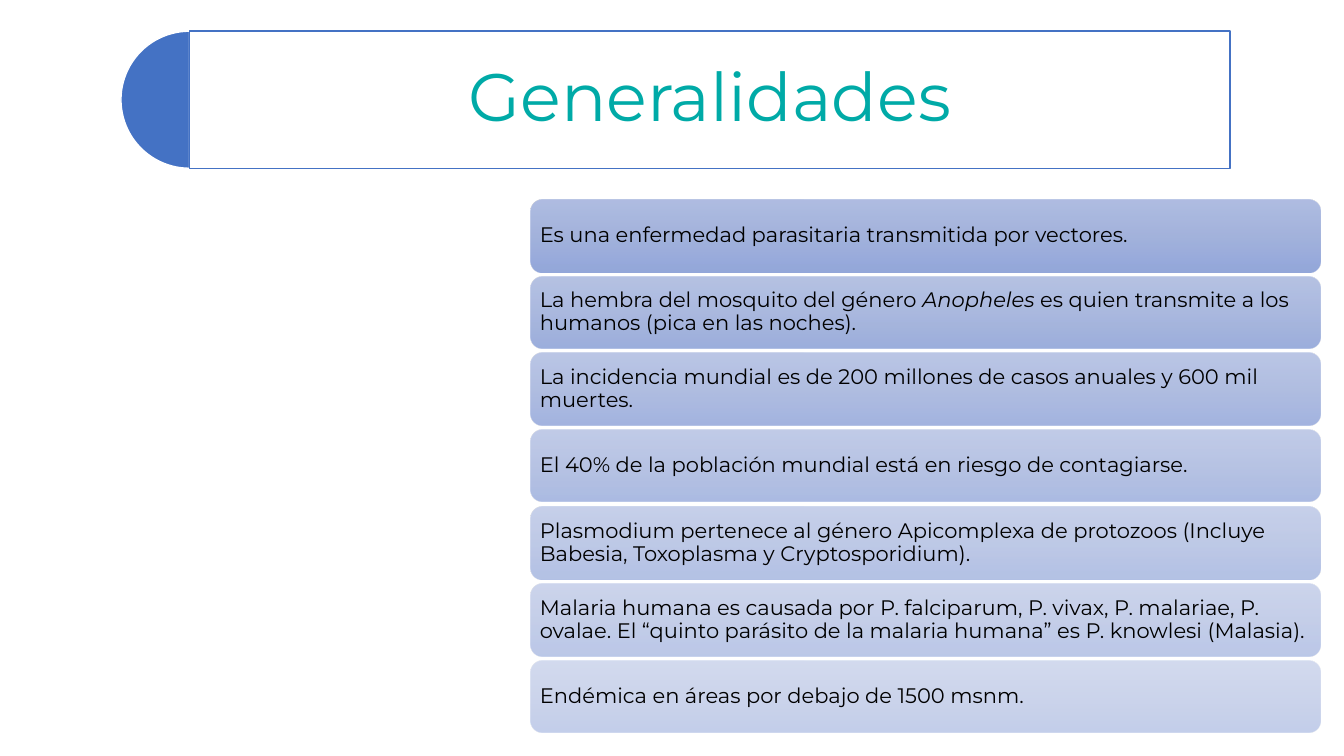
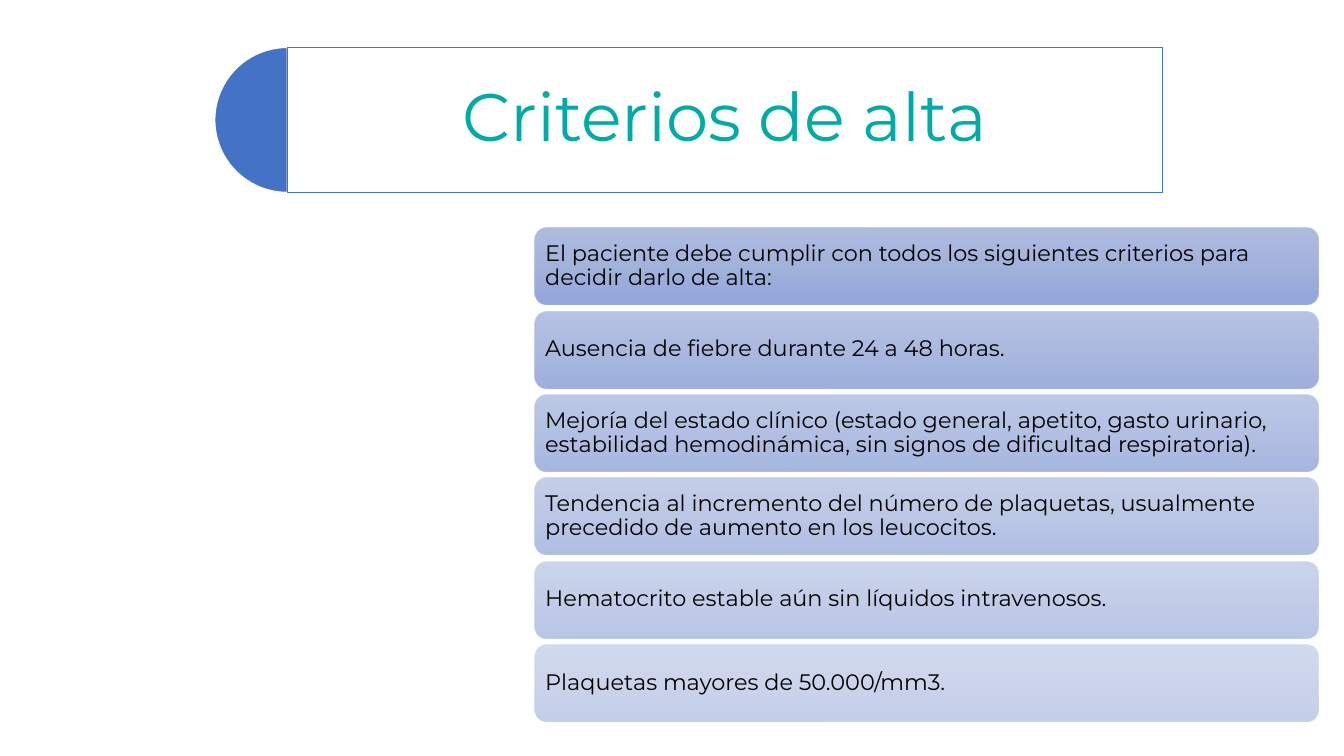
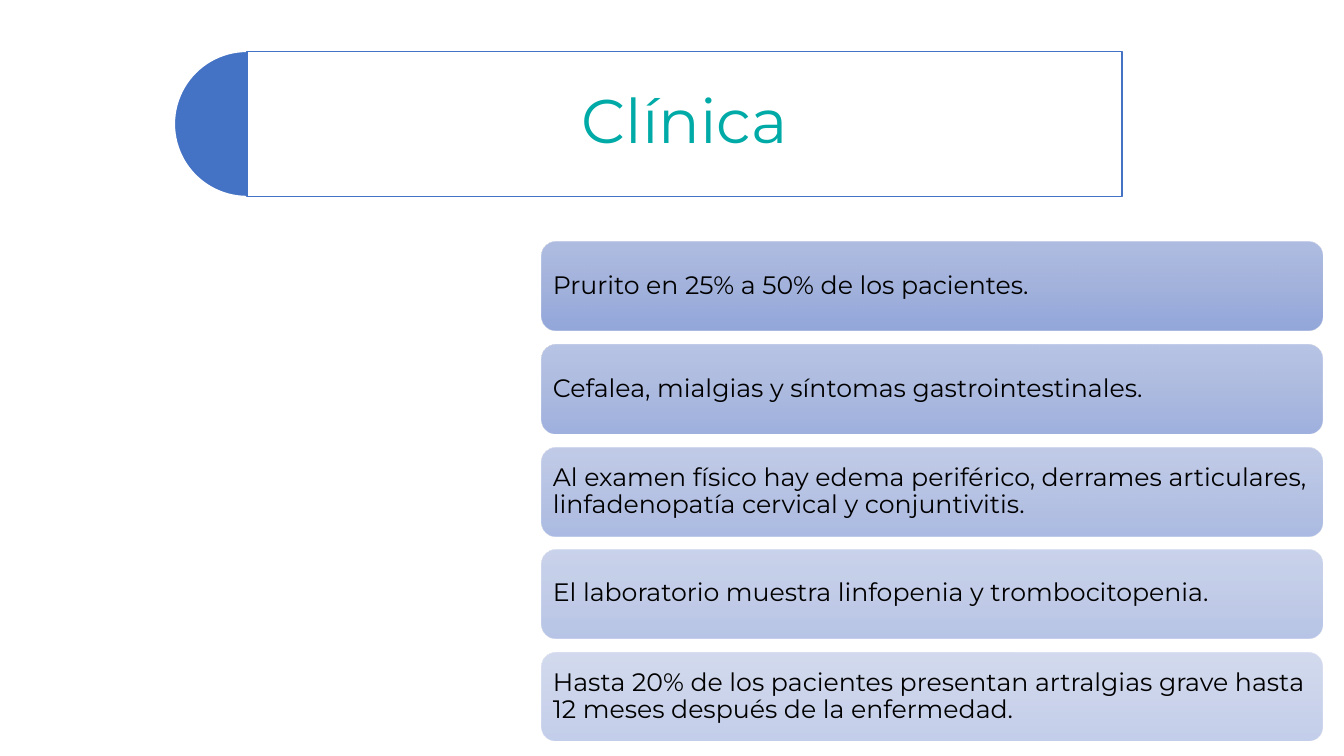
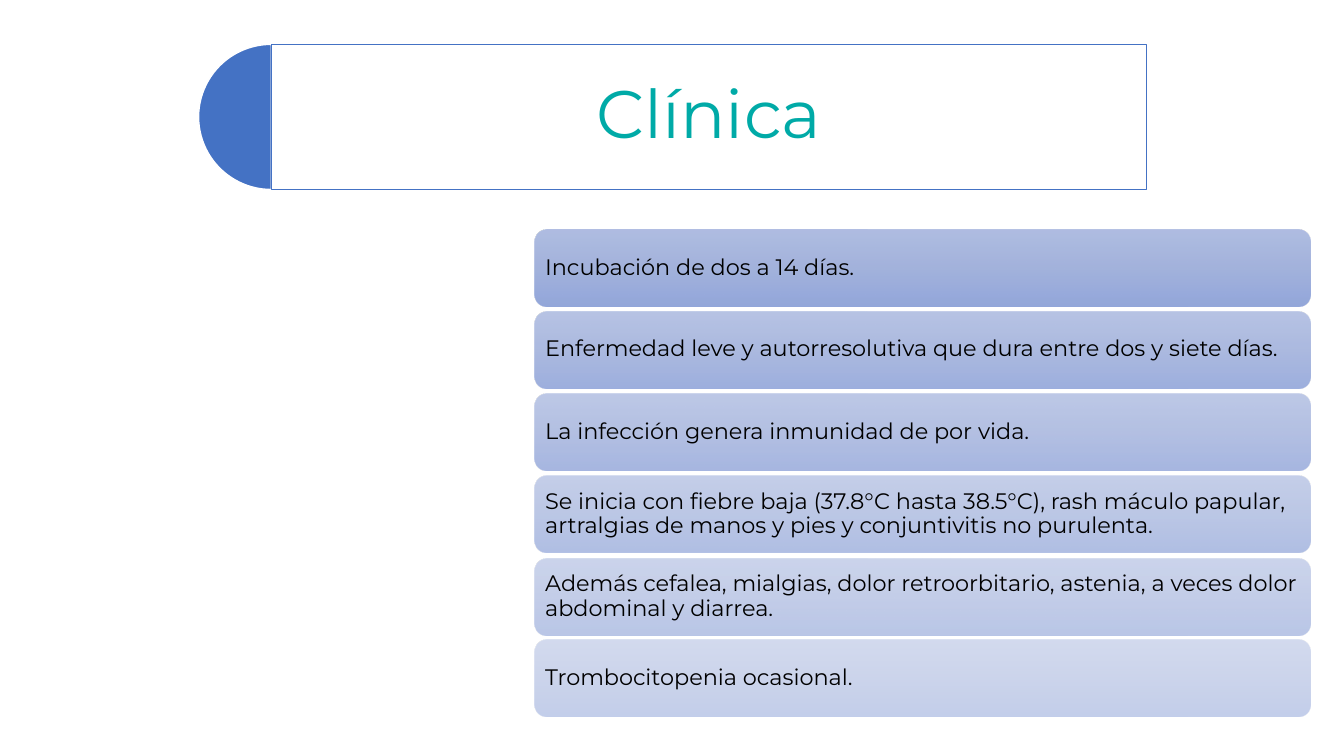
from pptx import Presentation
from pptx.dml.color import RGBColor
from pptx.enum.shapes import MSO_SHAPE
from pptx.enum.text import MSO_ANCHOR, PP_ALIGN
from pptx.oxml.ns import qn
from pptx.oxml.xmlchemy import OxmlElement
from pptx.util import Emu, Pt

PIE, RECT, ROUND = MSO_SHAPE.PIE, MSO_SHAPE.RECTANGLE, MSO_SHAPE.ROUNDED_RECTANGLE
LEFT, CENTER = PP_ALIGN.LEFT, PP_ALIGN.CENTER
MIDDLE = MSO_ANCHOR.MIDDLE

# Shared look
FONT = "Montserrat"
BLUE, TEAL, WHITE, BLACK = "4472C4", "00AAA7", "FFFFFF", "000000"
STOPS = ((0, "A8B7DF"), (50, "9AABD9"), (100, "889ED7"))
FIRST, LAST = 90, 50  # opacity of the top and bottom cards, in percent


def px(n):
    return Emu(n * 9144)


def rgb(code):
    return RGBColor.from_string(code)


def alpha(color, pct):
    """Give a colour element an opacity in percent."""
    node = OxmlElement("a:alpha")
    node.set("val", str(round(pct * 1000)))
    color.append(node)


def shape(slide, kind, x, y, w, h, fill=None, line=None):
    item = slide.shapes.add_shape(kind, px(x), px(y), px(w), px(h))
    item.shadow.inherit = False
    if fill:
        item.fill.solid()
        item.fill.fore_color.rgb = rgb(fill)
    if line:
        item.line.color.rgb = rgb(line)
        item.line.width = Pt(1)
    else:
        item.line.fill.background()
    return item


def shade(item, pct):
    """Fill with the shared downward gradient at one opacity."""
    item.fill.gradient()
    item.fill.gradient_angle = 270
    stops = item.element.spPr.find(qn("a:gradFill")).find(qn("a:gsLst"))
    for old in list(stops):
        stops.remove(old)
    for pos, code in STOPS:
        stop = OxmlElement("a:gs")
        stop.set("pos", str(pos * 1000))
        color = OxmlElement("a:srgbClr")
        color.set("val", code)
        alpha(color, pct)
        stop.append(color)
        stops.append(stop)


def write(item, text, size, color=BLACK, align=LEFT, inset=7):
    """Set the text of a shape; words between asterisks are italic."""
    frame = item.text_frame
    frame.word_wrap = True
    frame.vertical_anchor = MIDDLE
    frame.margin_left = frame.margin_right = px(inset)
    frame.margin_top = frame.margin_bottom = px(inset)
    para = frame.paragraphs[0]
    para.alignment = align
    para.line_spacing = 0.9
    for i, part in enumerate(text.split("*")):
        run = para.add_run()
        run.text = part
        run.font.name = FONT
        run.font.size = Pt(size)
        run.font.color.rgb = rgb(color)
        if i % 2:
            run.font.italic = True


def title(slide, text, x, y, w, h, size=48, inset=20):
    """Title box with a half disc on its left side."""
    disc = shape(slide, PIE, x - h // 2, y, h, h, BLUE, WHITE)
    disc.adjustments[0], disc.adjustments[1] = 54, 162
    box = shape(slide, RECT, x, y, w, h, WHITE, BLUE)
    alpha(box.element.spPr.find(qn("a:solidFill"))[0], 90)
    write(box, text, size, color=TEAL, align=CENTER, inset=inset)


def cards(slide, texts, x, top, end, w, h, size=16, inset=7):
    """Stack of equally spaced cards, from top to end, fading downwards."""
    for i, text in enumerate(texts):
        part = i / (len(texts) - 1)
        card = shape(slide, ROUND, x, round(top + part * (end - top)), w, h)
        shade(card, FIRST + part * (LAST - FIRST))
        write(card, text, size, inset=inset)


def main():
    deck = Presentation()
    deck.slide_width, deck.slide_height = px(1333), px(750)

    def page():
        return deck.slides.add_slide(deck.slide_layouts[6])

    # Overview
    slide = page()
    title(slide, "Generalidades", 188, 31, 1032, 136)
    cards(slide, (
        "Es una enfermedad parasitaria transmitida por vectores.",
        "La hembra del mosquito del género *Anopheles *es quien transmite a los "
        "humanos (pica en las noches).",
        "La incidencia mundial es de 200 millones de casos anuales y 600 mil muertes.",
        "El 40% de la población mundial está en riesgo de contagiarse.",
        "Plasmodium pertenece al género Apicomplexa de protozoos (Incluye Babesia, "
        "Toxoplasma y Cryptosporidium).",
        "Malaria humana es causada por P. falciparum, P. vivax, P. malariae, P. "
        "ovalae. El “quinto parásito de la malaria humana” es P. knowlesi (Malasia).",
        "Endémica en áreas por debajo de 1500 msnm.",
    ), 526, 198, 655, 784, 72, size=15, inset=6)

    # Discharge criteria
    slide = page()
    title(slide, "Criterios de alta", 285, 47, 868, 144)
    cards(slide, (
        "El paciente debe cumplir con todos los siguientes criterios para decidir "
        "darlo de alta:",
        "Ausencia de fiebre durante 24 a 48 horas.",
        "Mejoría del estado clínico (estado general, apetito, gasto urinario, "
        "estabilidad hemodinámica, sin signos de dificultad respiratoria).",
        "Tendencia al incremento del número de plaquetas, usualmente precedido de "
        "aumento en los leucocitos.",
        "Hematocrito estable aún sin líquidos intravenosos.",
        "Plaquetas mayores de 50.000/mm3.",
    ), 530, 226, 640, 778, 76)

    # Clinical signs
    slide = page()
    title(slide, "Clínica", 245, 51, 868, 144, size=44, inset=18)
    cards(slide, (
        "Prurito en 25% a 50% de los pacientes.",
        "Cefalea, mialgias y síntomas gastrointestinales.",
        "Al examen físico hay edema periférico, derrames articulares, "
        "linfadenopatía cervical y conjuntivitis.",
        "El laboratorio muestra linfopenia y trombocitopenia.",
        "Hasta 20% de los pacientes presentan artralgias grave hasta 12 meses "
        "después de la enfermedad.",
    ), 537, 240, 647, 775, 88, size=18)

    # Clinical course
    slide = page()
    title(slide, "Clínica", 269, 44, 868, 144)
    cards(slide, (
        "Incubación de dos a 14 días.",
        "Enfermedad leve y autorresolutiva que dura entre dos y siete días.",
        "La infección genera inmunidad de por vida.",
        "Se inicia con fiebre baja (37.8°C hasta 38.5°C), rash máculo papular, "
        "artralgias de manos y pies y conjuntivitis no purulenta.",
        "Además cefalea, mialgias, dolor retroorbitario, astenia, a veces dolor "
        "abdominal y diarrea.",
        "Trombocitopenia ocasional.",
    ), 530, 228, 635, 770, 76)

    deck.save("out.pptx")


if __name__ == "__main__":
    main()
